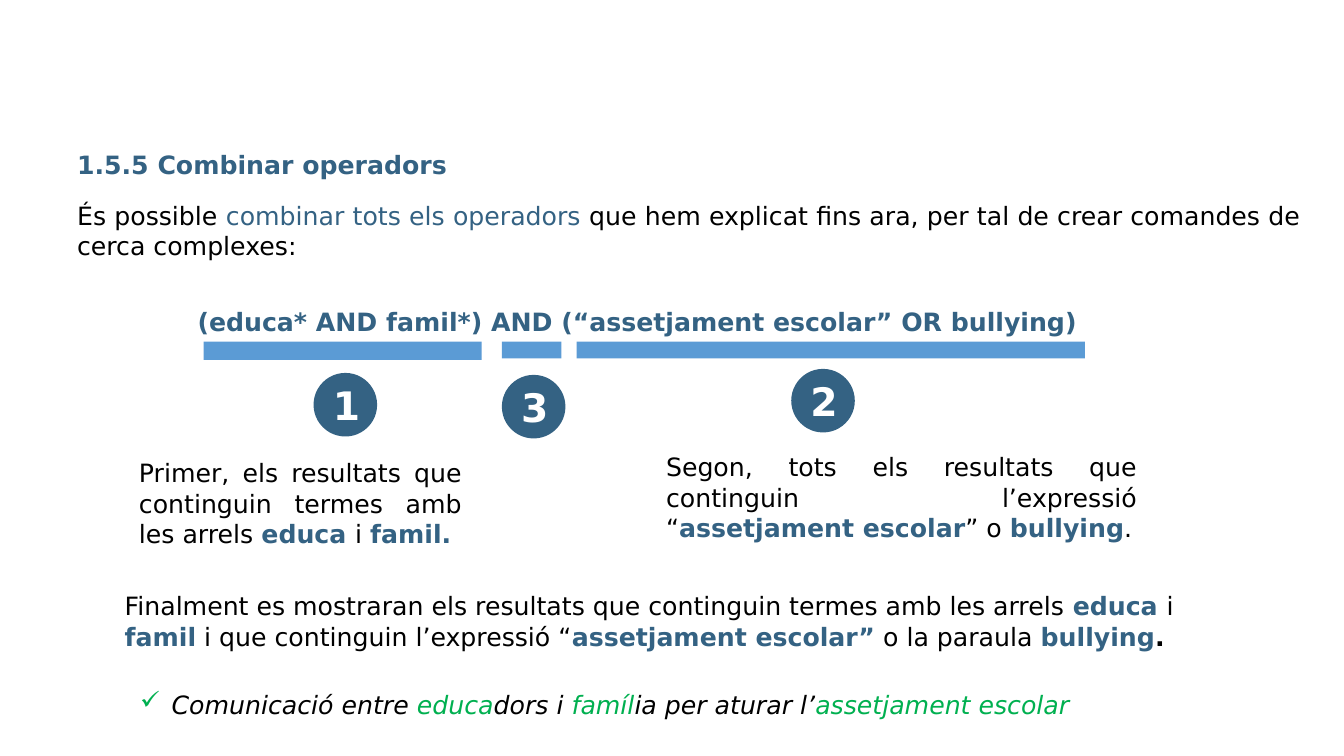
import pptx
import pptx.util
import pptx.dml.color
import pptx.enum.shapes
import pptx.enum.text
import pptx.oxml.ns
import lxml.etree

Pt = pptx.util.Pt
ALIGN = pptx.enum.text.PP_ALIGN
SHAPE = pptx.enum.shapes.MSO_SHAPE

FONT = "DejaVu Sans"
BLACK, NAVY, BLUE, GREEN, WHITE = "000000", "346283", "5B9BD5", "00B050", "FFFFFF"
PLAIN, TINTED, KEY, HEAVY = (BLACK, False), (NAVY, False), (NAVY, True), (BLACK, True)
FOUND = (GREEN, False)

heading = [("1.5.5 Combinar operadors", KEY)]
intro = [
    ("És possible ", PLAIN),
    ("combinar tots els operadors ", TINTED),
    ("que hem explicat fins ara, per tal de crear comandes de cerca complexes:", PLAIN),
]
query = [("(educa* AND famil*) AND (“assetjament escolar” OR bullying)", KEY)]
first_step = [
    ("Primer, els resultats que continguin termes amb les arrels ", PLAIN),
    ("educa ", KEY),
    ("i ", PLAIN),
    ("famil.", KEY),
]
second_step = [
    ("Segon, tots els resultats que continguin l’expressió “", PLAIN),
    ("assetjament escolar", KEY),
    ("” o ", PLAIN),
    ("bullying", KEY),
    (".", PLAIN),
]
final_step = [
    ("Finalment es mostraran els resultats que continguin termes amb les arrels ", PLAIN),
    ("educa ", KEY),
    ("i ", PLAIN),
    ("famil", KEY),
    (" i que continguin l’expressió “", PLAIN),
    ("assetjament escolar”", KEY),
    (" o la paraula ", PLAIN),
    ("bullying", KEY),
    (".", HEAVY),
]
example = [
    ("Comunicació entre ", PLAIN),
    ("educa", FOUND),
    ("dors i ", PLAIN),
    ("famíl", FOUND),
    ("ia per aturar l’", PLAIN),
    ("assetjament escolar", FOUND),
]

passages = [
    (heading, (48, 103, 763, 62), ALIGN.LEFT),
    (intro, (48, 139.7, 888, 51), ALIGN.JUSTIFY),
    (query, (134, 215.3, 683, 193), ALIGN.JUSTIFY),
    (first_step, (92.2, 323.3, 244.8, 72.7), ALIGN.JUSTIFY),
    (second_step, (468.7, 319, 350.6, 72.7), ALIGN.JUSTIFY),
    (final_step, (82, 418.3, 774, 72.7), ALIGN.LEFT),
]
example_area = (93, 489, 725.8, 51)

BAR_TOP = 244
underlines = [(145.5, 198.5, 13), (412, 363, 12), (358.5, 42.5, 12)]
BADGE = 45.4
badges = [("1", 224, 266.4), ("2", 565.2, 263.5), ("3", 358.5, 267.8)]


def color(value):
    return pptx.dml.color.RGBColor.from_string(value)


def add_passage(slide, pieces, area, align):
    box = slide.shapes.add_textbox(*map(Pt, area))
    frame = box.text_frame
    frame.word_wrap = True
    frame.auto_size = pptx.enum.text.MSO_AUTO_SIZE.SHAPE_TO_FIT_TEXT
    paragraph = frame.paragraphs[0]
    paragraph.alignment = align
    paragraph.font.name = FONT
    paragraph.font.size = Pt(18)
    for text, (tone, bold) in pieces:
        run = paragraph.add_run()
        run.text = text
        run.font.name = FONT
        run.font.size = Pt(18)
        run.font.bold = bold
        run.font.color.rgb = color(tone)
    return paragraph


def add_tick(paragraph, indent):
    qn = pptx.oxml.ns.qn
    properties = paragraph._p.get_or_add_pPr()
    properties.set("marL", str(Pt(indent)))
    properties.set("indent", str(-Pt(indent)))
    tint = lxml.etree.Element(qn("a:buClr"))
    lxml.etree.SubElement(tint, qn("a:srgbClr")).set("val", GREEN)
    mark = lxml.etree.Element(qn("a:buChar"))
    mark.set("char", "✓")
    properties.insert(0, tint)
    properties.insert(1, mark)


def add_solid(slide, kind, area, fill):
    solid = slide.shapes.add_shape(kind, *map(Pt, area))
    solid.shadow.inherit = False
    solid.fill.solid()
    solid.fill.fore_color.rgb = color(fill)
    solid.line.fill.background()
    return solid


def add_badge(slide, number, left, top):
    badge = add_solid(slide, SHAPE.OVAL, (left, top, BADGE, BADGE), NAVY)
    badge.text_frame.vertical_anchor = pptx.enum.text.MSO_ANCHOR.MIDDLE
    paragraph = badge.text_frame.paragraphs[0]
    paragraph.text = number
    paragraph.alignment = ALIGN.CENTER
    paragraph.font.name = FONT
    paragraph.font.size = Pt(28)
    paragraph.font.bold = True
    paragraph.font.color.rgb = color(WHITE)


def main():
    deck = pptx.Presentation()
    deck.slide_width, deck.slide_height = Pt(960), Pt(540)
    slide = deck.slides.add_slide(deck.slide_layouts[6])
    for pieces, area, align in passages:
        add_passage(slide, pieces, area, align)
    for left, width, height in underlines:
        add_solid(slide, SHAPE.RECTANGLE, (left, BAR_TOP, width, height), BLUE)
    for number, left, top in badges:
        add_badge(slide, number, left, top)
    example_line = add_passage(slide, example, example_area, ALIGN.LEFT)
    add_tick(example_line, 22.5)
    for run in example_line.runs:
        run.font.italic = True
    deck.save("out.pptx")


if __name__ == "__main__":
    main()
